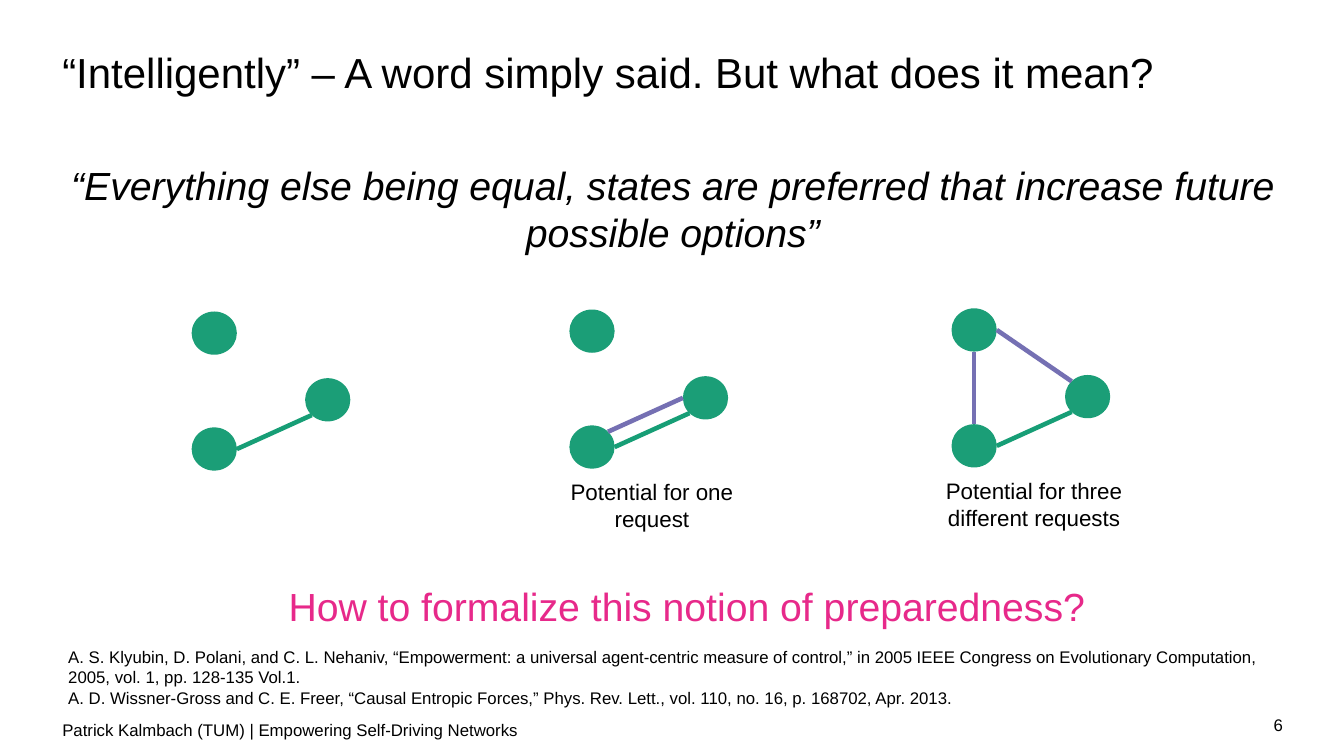
from dataclasses import dataclass
from math import cos, radians, sin
from typing import NamedTuple, Optional

from lxml.etree import SubElement
from pptx import Presentation
from pptx.dml.color import RGBColor
from pptx.enum.shapes import MSO_CONNECTOR, MSO_SHAPE
from pptx.enum.text import MSO_ANCHOR as Anchor, PP_ALIGN as Align
from pptx.oxml.ns import qn
from pptx.shapes.shapetree import GroupShapes
from pptx.util import Cm, Pt


@dataclass(frozen=True)
class Theme:
    font: str = "Arial"
    text: RGBColor = RGBColor.from_string("000000")
    question: RGBColor = RGBColor.from_string("E7298A")
    node: RGBColor = RGBColor.from_string("1B9E77")
    link: RGBColor = RGBColor.from_string("179E76")
    option: RGBColor = RGBColor.from_string("7570B3")
    title_size: float = 30
    statement_size: float = 28
    caption_size: float = 16
    small_size: float = 12
    line_width: float = 3.25


THEME = Theme()


@dataclass(frozen=True)
class Label:
    """A text box; lengths in centimetres, one paragraph per line."""
    lines: tuple[str, ...]
    left: float
    top: float
    width: float
    height: float
    size: float
    color: RGBColor = THEME.text
    align: Align = Align.LEFT
    anchor: Anchor = Anchor.MIDDLE
    italic: bool = False
    line_spacing: Optional[float] = None


class Site(NamedTuple):
    """A point on a node's rim, by angle counterclockwise from the right."""
    node: str
    angle: float


class Edge(NamedTuple):
    start: Site
    end: Site
    color: RGBColor


class Graph(NamedTuple):
    left: float
    top: float
    edges: tuple[Edge, ...]
    caption: str = ""


NODE_WIDTH, NODE_HEIGHT = 1.14, 1.09
NODE_OFFSETS = {"upper": (0, 0), "lower": (0, 2.92), "right": (2.86, 1.68)}

LINK = Edge(Site("lower", 0), Site("right", 225), THEME.link)
PARALLEL = Edge(Site("lower", 45), Site("right", 180), THEME.option)
VERTICAL = Edge(Site("lower", 90), Site("upper", 270), THEME.option)
DIAGONAL = Edge(Site("right", 135), Site("upper", 0), THEME.option)

GRAPHS = (
    Graph(4.83, 7.85, (LINK,)),
    Graph(14.35, 7.8, (LINK, PARALLEL), "Potential for one request"),
    Graph(23.98, 7.77, (LINK, VERTICAL, DIAGONAL),
          "Potential for three different requests"),
)

HEADINGS = (
    Label(("Patrick Kalmbach (TUM) | Empowering Self-Driving Networks",),
          1.32, 17.88, 29.18, 1, THEME.small_size),
    Label(("“Intelligently” – A word simply said. But what does it mean?",),
          1.32, 1.14, 30.23, 1, THEME.title_size, line_spacing=1.25),
    Label(("6",), 30.5, 17.88, 2.08, 1, THEME.small_size,
          align=Align.RIGHT, anchor=Anchor.TOP),
    Label(("“Everything else being equal, states are preferred that increase "
           "future possible options”",),
          1.5, 3.94, 30.91, 2.64, THEME.statement_size,
          align=Align.CENTER, italic=True),
)

CONCLUSIONS = (
    Label(("How to formalize this notion of preparedness?",),
          1.85, 14.55, 30.91, 1.45, THEME.statement_size,
          color=THEME.question, align=Align.CENTER),
    Label(("A. S. Klyubin, D. Polani, and C. L. Nehaniv, “Empowerment: a "
           "universal agent-centric measure of control,” in 2005 IEEE Congress "
           "on Evolutionary Computation, 2005, vol. 1, pp. 128-135 Vol.1.",
           "A. D. Wissner-Gross and C. E. Freer, “Causal Entropic Forces,” "
           "Phys. Rev. Lett., vol. 110, no. 16, p. 168702, Apr. 2013."),
          1.47, 16.18, 31.45, 1.8, THEME.small_size, anchor=Anchor.TOP),
)


def add_label(shapes: GroupShapes, label: Label) -> None:
    box = shapes.add_textbox(Cm(label.left), Cm(label.top),
                             Cm(label.width), Cm(label.height))
    frame = box.text_frame
    frame.word_wrap = True
    frame.vertical_anchor = label.anchor
    frame.text = "\n".join(label.lines)
    for paragraph in frame.paragraphs:
        paragraph.alignment = label.align
        paragraph.line_spacing = label.line_spacing
        font = paragraph.font
        font.name = THEME.font
        font.size = Pt(label.size)
        font.italic = label.italic
        font.color.rgb = label.color


def add_node(shapes: GroupShapes, left: float, top: float) -> None:
    node = shapes.add_shape(MSO_SHAPE.OVAL, Cm(left), Cm(top),
                            Cm(NODE_WIDTH), Cm(NODE_HEIGHT))
    node.shadow.inherit = False
    node.fill.solid()
    node.fill.fore_color.rgb = THEME.node
    node.line.fill.background()


def site_point(graph: Graph, site: Site) -> tuple[Cm, Cm]:
    offset_x, offset_y = NODE_OFFSETS[site.node]
    angle = radians(site.angle)
    return (Cm(graph.left + offset_x + NODE_WIDTH / 2 * (1 + cos(angle))),
            Cm(graph.top + offset_y + NODE_HEIGHT / 2 * (1 - sin(angle))))


def add_edge(shapes: GroupShapes, graph: Graph, edge: Edge) -> None:
    line = shapes.add_connector(MSO_CONNECTOR.STRAIGHT,
                                *site_point(graph, edge.start),
                                *site_point(graph, edge.end))
    line.line.color.rgb = edge.color
    line.line.width = Pt(THEME.line_width)
    SubElement(line._element.spPr, qn("a:effectLst"))


def add_graph(shapes: GroupShapes, graph: Graph) -> None:
    members = shapes.add_group_shape().shapes
    for offset_x, offset_y in NODE_OFFSETS.values():
        add_node(members, graph.left + offset_x, graph.top + offset_y)
    for edge in graph.edges:
        add_edge(members, graph, edge)
    if graph.caption:
        add_label(members, Label((graph.caption,), graph.left - 0.61,
                                 graph.top + 4.12, 5.38, 1.63,
                                 THEME.caption_size, align=Align.CENTER))


def main() -> None:
    presentation = Presentation()
    presentation.slide_width = Cm(33.87)
    presentation.slide_height = Cm(19.05)
    slide = presentation.slides.add_slide(presentation.slide_layouts[6])
    for label in HEADINGS:
        add_label(slide.shapes, label)
    for graph in GRAPHS:
        add_graph(slide.shapes, graph)
    for label in CONCLUSIONS:
        add_label(slide.shapes, label)
    presentation.save("out.pptx")


if __name__ == "__main__":
    main()
